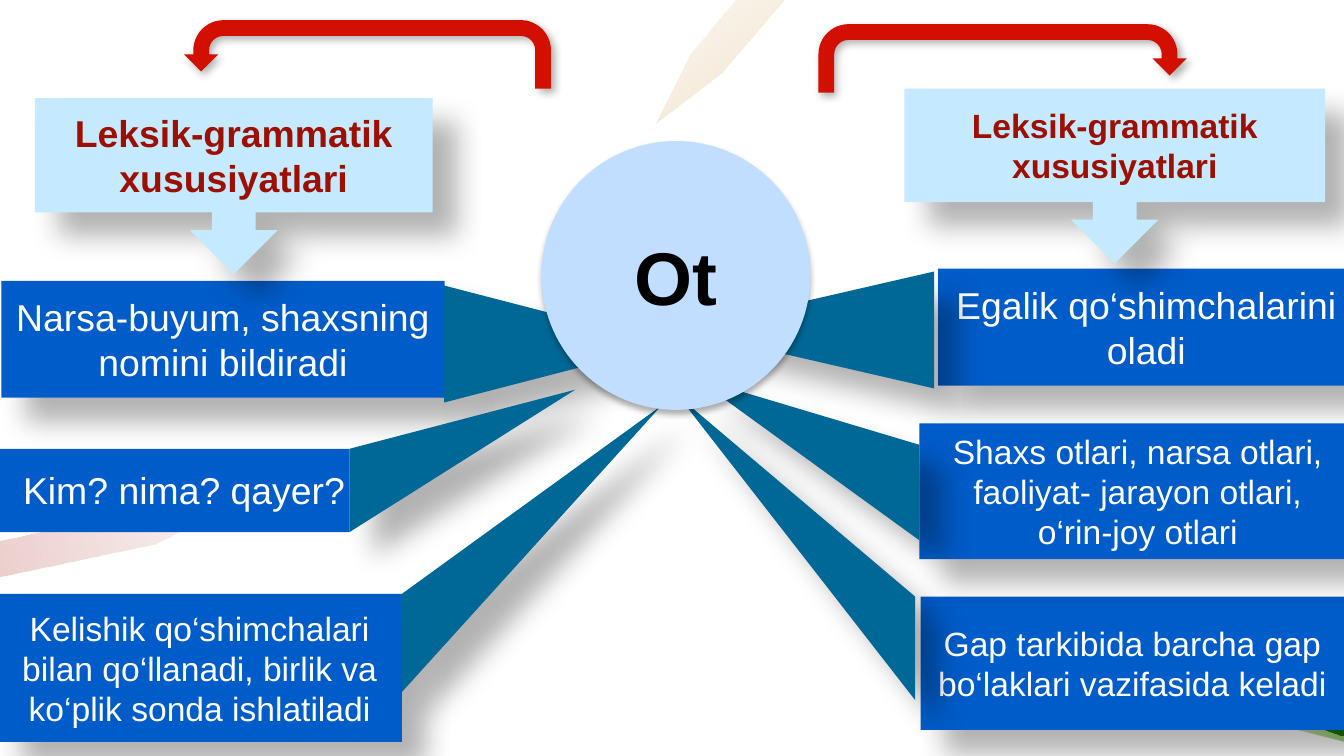
from pptx import Presentation, util as u
from pptx.dml.color import RGBColor
from pptx.enum import shapes, text
from pptx.oxml import parse_xml
from pptx.oxml.ns import nsdecls, qn

prs = Presentation()
prs.slide_width, prs.slide_height = u.Inches(10), u.Inches(10 * 9 / 16)
s = prs.slides.add_slide(prs.slide_layouts[6])
MSO = shapes.MSO_SHAPE
DEEP, SOFT, ARROW = (30, 15, 18, 45), (32, 3.5, 2.2, 90), (30, 4.5, 2.6, 53)


def style(sp, color, shadow=None):
    sp.shadow.inherit = False
    sp.line.fill.background()
    if color:
        sp.fill.solid()
        sp.fill.fore_color.rgb = RGBColor.from_string(color)
    if shadow:
        alpha, blur, dist, angle = shadow
        sp.element.spPr.find(qn("a:effectLst")).append(parse_xml(
            f'<a:outerShdw {nsdecls("a")} blurRad="{u.Pt(blur)}" dist="{u.Pt(dist)}" '
            f'dir="{angle * 60000}" algn="tl" rotWithShape="0"><a:srgbClr val="000000">'
            f'<a:alpha val="{alpha * 1000}"/></a:srgbClr></a:outerShdw>'))


def write(sp, words, size, color, bold=False):
    tf = sp.text_frame
    tf.word_wrap = True
    p = tf.paragraphs[0]
    p.alignment = text.PP_ALIGN.CENTER
    r = p.add_run()
    r.text = words
    for name, value in {"size": u.Pt(size), "name": "Arial", "bold": bold}.items():
        setattr(r.font, name, value)
    r.font.color.rgb = RGBColor.from_string(color)


strokes = [
    ([(9.01, 5.35), (9.3, 5.38), (9.65, 5.43), (10, 5.52), (10, 5.01), (9.6, 4.92), (9.18, 4.89)],
     [(0.03, "3DA800", 6), (1, "3DA800", 50)], 0),
    ([(10, 4.97), (9.17, 4.67), (9, 5.12), (10, 5.48)],
     [(0.03, "3DA800", 100), (1, "1F7100", 100)], 0),
    ([(5.84, 0), (5.48, 0), (5.14, 0.4), (4.88, 0.92), (5.37, 0.55)],
     [(0, "C07400", 5), (1, "C07400", 20)], 53),
    ([(1.68, 3.79), (1.06, 3.79), (0, 4.02), (0, 4.29), (1.15, 4.05)],
     [(0, "9D0F00", 5), (1, "9D0F00", 20)], 164),
]
for points, stops, angle in strokes:
    pts = [(u.Inches(x), u.Inches(y)) for x, y in points]
    fb = s.shapes.build_freeform(*pts[0])
    fb.add_line_segments(pts[1:])
    sp = fb.convert_to_shape()
    style(sp, None)
    sp.fill.gradient()
    sp.fill.gradient_angle = (360 - angle) % 360
    for stop, gs, (position, color, alpha) in zip(
            sp.fill.gradient_stops, sp.element.iter(qn("a:gs")), stops):
        stop.position = position
        stop.color.rgb = RGBColor.from_string(color)
        gs[0].append(parse_xml(f'<a:alpha {nsdecls("a")} val="{alpha * 1000}"/>'))

branches = [
    ((0.01, 2.09, 3.3, 0.87), "Narsa-buyum, shaxsning nomini bildiradi", 20,
     (3.71, 1.72, 0.87, 1.68), 90),
    ((-0.02, 4.42, 3.01, 1.1),
     "Kеlishik qo‘shimchalari bilan qo‘llanadi, birlik va ko‘plik sonda ishlatiladi", 18,
     [(2.99, 5.15), (4.92, 3.02), (2.99, 4.42)], None),
    ((-0.02, 3.34, 2.62, 0.62), None, 20, [(2.6, 3.96), (4.28, 2.9), (2.6, 3.34)], None),
    ((6.98, 2, 3.1, 0.87), "Egalik qo‘shimchalarini oladi", 20,
     (5.57, 1.51, 0.87, 1.89), 270),
    ((6.85, 4.44, 3.15, 0.99), "Gap tarkibida barcha gap bo‘laklari vazifasida keladi", 18,
     [(6.81, 5.21), (5.05, 2.95), (6.81, 4.44)], None),
    ((6.84, 3.15, 3.25, 1.01),
     "Shaxs otlari, narsa otlari, faoliyat- jarayon otlari, o‘rin-joy otlari", 18,
     [(6.84, 4.02), (5.17, 2.81), (6.84, 3.31)], None),
]
for box, words, size, wedge, rotation in branches:
    sp = s.shapes.add_shape(MSO.RECTANGLE, *map(u.Inches, box))
    style(sp, "005CC9", DEEP if words else None)
    if words:
        write(sp, words, size, "FFFFFF")
    if rotation:
        sp = s.shapes.add_shape(MSO.ISOSCELES_TRIANGLE, *map(u.Inches, wedge))
        sp.rotation = rotation
    else:
        pts = [(u.Inches(x), u.Inches(y)) for x, y in wedge]
        fb = s.shapes.build_freeform(*pts[0])
        fb.add_line_segments(pts[1:])
        sp = fb.convert_to_shape()
    style(sp, "006896", DEEP)

sp = s.shapes.add_shape(MSO.OVAL, *map(u.Inches, (4.03, 1.05, 2, 2)))
style(sp, "C1DDFF", SOFT)
write(sp, "Ot", 40, "000000", True)
for side in ("left", "right", "top", "bottom"):
    setattr(sp.text_frame, f"margin_{side}", 0)

for box, flipped in [((6.09, 0.18, 2.74, 0.51), False), ((1.37, 0.15, 2.73, 0.51), True)]:
    sp = s.shapes.add_shape(MSO.U_TURN_ARROW, *map(u.Inches, box))
    for i, value in enumerate((0.23, 0.25, 0.25, 0.44, 0.75)):
        sp.adjustments[i] = value
    if flipped:
        sp.element.spPr.find(qn("a:xfrm")).set("flipH", "1")
    style(sp, "D30F00", ARROW)

for box, size in [((0.26, 0.73, 2.96, 1.31), 20), ((6.73, 0.66, 3.13, 1.3), 18)]:
    sp = s.shapes.add_shape(MSO.DOWN_ARROW_CALLOUT, *map(u.Inches, box))
    style(sp, "C5EAFF", DEEP)
    write(sp, "Leksik-grammatik xususiyatlari", size, "9D0F00", True)

sp = s.shapes.add_textbox(*map(u.Inches, (0.06, 3.43, 2.62, 0.44)))
write(sp, "Kim? nima? qayer? ", 20, "FFFFFF")

prs.save("out.pptx")
